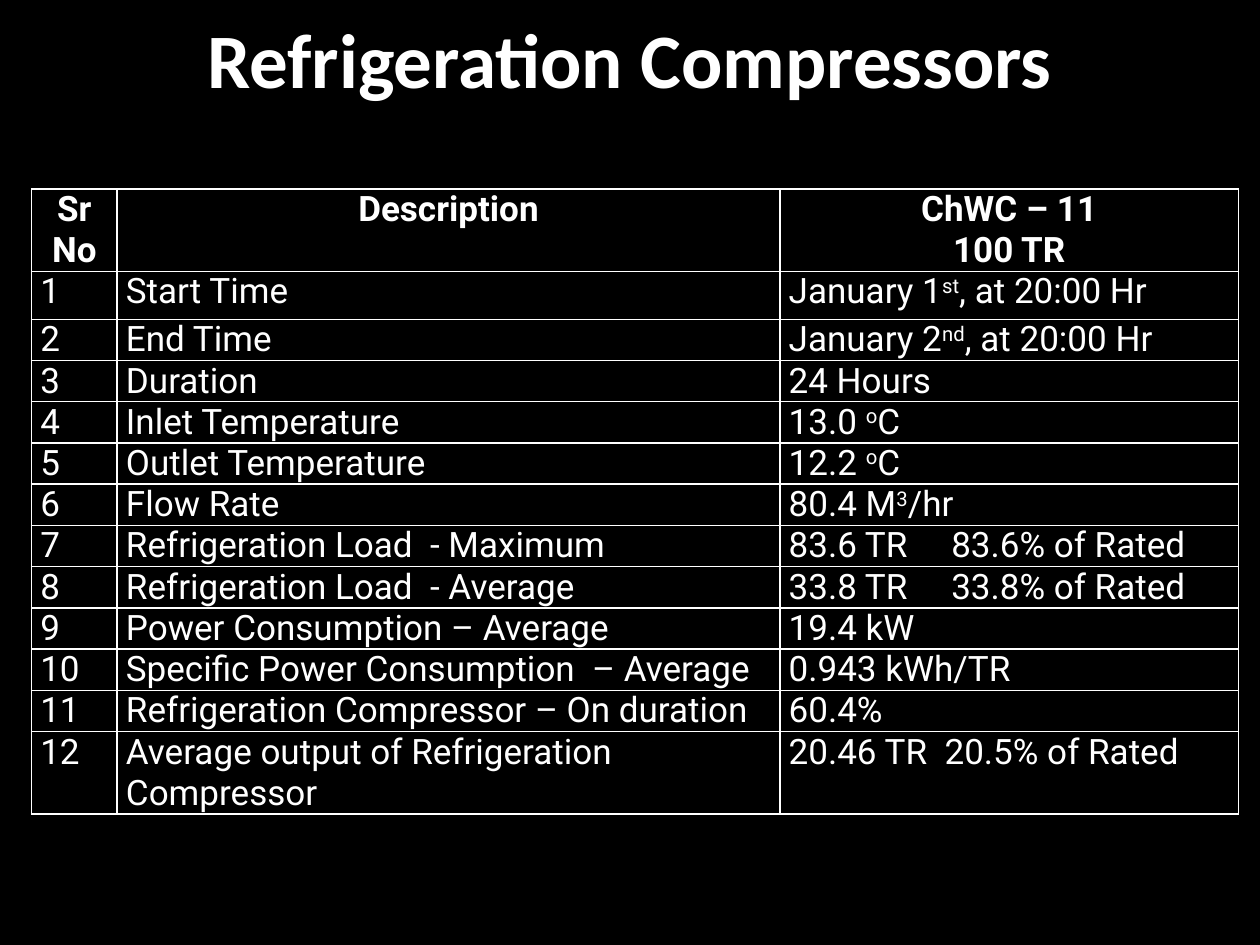
from lxml import etree
from pptx import Presentation
from pptx import util as u
from pptx.dml.color import RGBColor
from pptx.enum import text
from pptx.oxml import ns

HEADING = "Refrigeration Compressors"
HEADERS = ["Sr No", "Description", "ChWC – 11\n100 TR"]
READINGS = [
    ("Start Time", "January 1^st^, at 20:00 Hr"),
    ("End Time", "January 2^nd^, at 20:00 Hr"),
    ("Duration", "24 Hours"),
    ("Inlet Temperature", "13.0 ^o^C"),
    ("Outlet Temperature", "12.2 ^o^C"),
    ("Flow Rate", "80.4 M^3^/hr"),
    ("Refrigeration Load  - Maximum", "83.6 TR\t83.6% of Rated"),
    ("Refrigeration Load  - Average", "33.8 TR\t33.8% of Rated"),
    ("Power Consumption – Average", "19.4 kW"),
    ("Specific Power Consumption  – Average", "0.943 kWh/TR"),
    ("Refrigeration Compressor – On duration", "60.4%"),
    ("Average output of Refrigeration Compressor", "20.46 TR  20.5% of Rated"),
]
COLUMN_WIDTHS = [0.68, 5.26, 3.64]
ROW_HEIGHT = 0.29
TALL_ROWS = {0: 0.58, 1: 0.38, 2: 0.31, 7: 0.31, 8: 0.32, 12: 0.55}
RATED_TAB = 1.29
CELL_FORMAT = {
    "margin_left": u.Inches(0.07),
    "margin_right": u.Inches(0.07),
    "margin_top": 0,
    "margin_bottom": 0,
    "vertical_anchor": text.MSO_ANCHOR.TOP,
}
THEME = {
    "background": "000000",
    "ink": "FFFFFF",
    "heading": {"name": "Calibri", "size": u.Pt(44), "bold": True},
    "header": {"name": "Roboto", "size": u.Pt(20), "bold": True},
    "reading": {"name": "Roboto", "size": u.Pt(20), "bold": False},
    "border": u.Pt(1),
}


def assign(target, values):
    for name, value in values.items():
        setattr(target, name, value)


def write(paragraph, wording, style, alignment):
    paragraph.alignment = alignment
    for position, part in enumerate(wording.split("^")):
        run = paragraph.add_run()
        run.text = part
        assign(run.font, THEME[style])
        run.font.color.rgb = RGBColor.from_string(THEME["ink"])
        if position % 2:
            run._r.get_or_add_rPr().set("baseline", "30000")
    if "\t" in wording:
        stops = etree.SubElement(paragraph._p.get_or_add_pPr(), ns.qn("a:tabLst"))
        etree.SubElement(stops, ns.qn("a:tab"), pos=str(u.Inches(RATED_TAB)), algn="l")


def add_borders(cell):
    properties = cell._tc.get_or_add_tcPr()
    for position, side in enumerate(("lnL", "lnR", "lnT", "lnB")):
        line = etree.Element(ns.qn(f"a:{side}"), w=str(THEME["border"]))
        fill = etree.SubElement(line, ns.qn("a:solidFill"))
        etree.SubElement(fill, ns.qn("a:srgbClr"), val=THEME["ink"])
        properties.insert(position, line)


def fill_cell(cell, wording, style, alignment):
    assign(cell, CELL_FORMAT)
    cell.fill.solid()
    cell.fill.fore_color.rgb = RGBColor.from_string(THEME["background"])
    add_borders(cell)
    for position, line in enumerate(wording.split("\n")):
        frame = cell.text_frame
        paragraph = frame.add_paragraph() if position else frame.paragraphs[0]
        write(paragraph, line, style, alignment)


def add_heading(slide):
    heading = slide.shapes.add_textbox(0, 0, u.Inches(10), u.Inches(0.92)).text_frame
    assign(heading, {"word_wrap": True, "vertical_anchor": text.MSO_ANCHOR.MIDDLE})
    write(heading.paragraphs[0], HEADING, "heading", text.PP_ALIGN.CENTER)


def add_readings(slide):
    rows = [HEADERS] + [(str(n), *reading) for n, reading in enumerate(READINGS, 1)]
    heights = [TALL_ROWS.get(r, ROW_HEIGHT) for r in range(len(rows))]
    readings = slide.shapes.add_table(
        len(rows), len(HEADERS), u.Inches(0.25), u.Inches(1.5),
        u.Inches(sum(COLUMN_WIDTHS)), u.Inches(sum(heights)),
    ).table
    assign(readings, {"first_row": False, "horz_banding": False})
    for column, width in zip(readings.columns, COLUMN_WIDTHS):
        column.width = u.Inches(width)
    for r, (row, height) in enumerate(zip(rows, heights)):
        readings.rows[r].height = u.Inches(height)
        style = "reading" if r else "header"
        alignment = text.PP_ALIGN.LEFT if r else text.PP_ALIGN.CENTER
        for c, wording in enumerate(row):
            fill_cell(readings.cell(r, c), wording, style, alignment)


def main():
    deck = Presentation()
    assign(deck, {"slide_width": u.Inches(10), "slide_height": u.Inches(7.5)})
    slide = deck.slides.add_slide(deck.slide_layouts[6])
    slide.background.fill.solid()
    slide.background.fill.fore_color.rgb = RGBColor.from_string(THEME["background"])
    add_readings(slide)
    add_heading(slide)
    deck.save("out.pptx")


if __name__ == "__main__":
    main()
